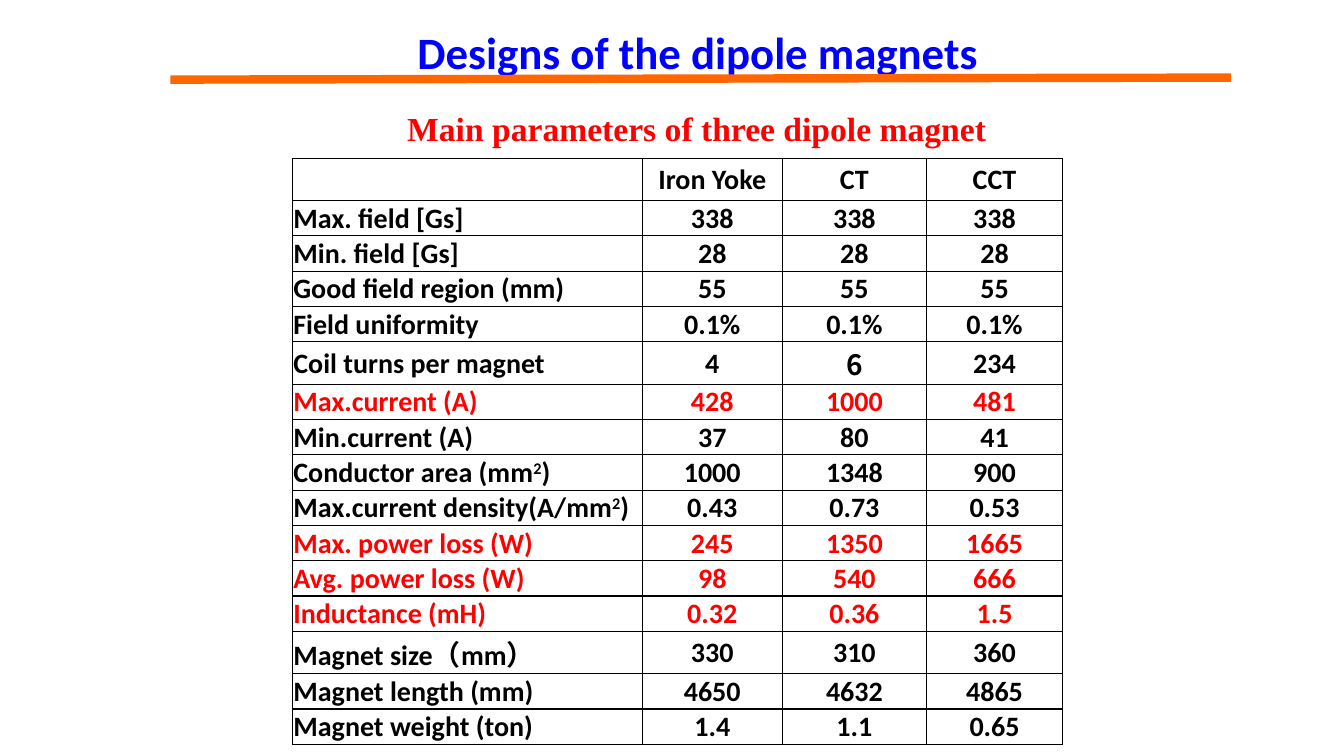
import dataclasses

import pptx
import pptx.chart
import pptx.dml.color
import pptx.enum.shapes
import pptx.enum.text
import pptx.oxml
import pptx.oxml.ns
import pptx.util
from pptx.util import Inches

RGBColor = pptx.dml.color.RGBColor
BLACK = RGBColor(0, 0, 0)
RED = RGBColor(0xFF, 0, 0)
BLUE = RGBColor(0, 0, 0xFF)
ORANGE = RGBColor(0xFF, 0x66, 0)
SANS, SERIF, CJK = "Calibri", "Times New Roman", "Noto Sans CJK SC"
LOW, TALL = Inches(0.35), Inches(0.42)
MARK = "^"


@dataclasses.dataclass
class Row:
    label: str
    yoke: str
    ct: str
    cct: str
    color: RGBColor = BLACK
    height: int = LOW
    font: str = SANS  # font of the CT value


ROWS = [
    Row("", "Iron Yoke", "CT", "CCT", height=TALL),
    Row("Max. field [Gs]", "338", "338", "338"),
    Row("Min. field [Gs]", "28", "28", "28"),
    Row("Good field region (mm)", "55", "55", "55"),
    Row("Field uniformity", "0.1%", "0.1%", "0.1%"),
    Row("Coil turns per magnet", "4", "6", "234", height=TALL, font=CJK),
    Row("Max.current (A)", "428", "1000", "481", RED),
    Row("Min.current (A)", "37", "80", "41"),
    Row("Conductor area (mm^2^)", "1000", "1348", "900"),
    Row("Max.current density(A/mm^2^)", "0.43", "0.73", "0.53"),
    Row("Max. power loss (W)", "245", "1350", "1665", RED),
    Row("Avg. power loss (W)", "98", "540", "666", RED),
    Row("Inductance (mH)", "0.32", "0.36", "1.5", RED),
    Row("Magnet size（mm）", "330", "310", "360", height=TALL),
    Row("Magnet length (mm)", "4650", "4632", "4865"),
    Row("Magnet weight (ton)", "1.4", "1.1", "0.65"),
]
WIDTHS = [3.47, 1.39, 1.43, 1.35]


def add_runs(par, text: str, size: int, font: str, color: RGBColor) -> None:
    """Add bold runs; text between two marks is superscript."""
    for i, part in enumerate(text.split(MARK)):
        run = par.add_run()
        run.text = part
        run.font.size = pptx.util.Pt(size)
        run.font.bold = True
        run.font.name = font
        run.font.color.rgb = color
        props = run._r.get_or_add_rPr()
        east = pptx.oxml.parse_xml(
            f'<a:ea {pptx.oxml.ns.nsdecls("a")} typeface="{CJK}"/>')
        props.find(pptx.oxml.ns.qn("a:latin")).addnext(east)
        if i % 2:
            props.set("baseline", "30000")


def set_head(shape, box: tuple, text: str, size: int, font: str,
             color: RGBColor) -> None:
    shape.left, shape.top, shape.width, shape.height = map(Inches, box)
    frame = shape.text_frame
    frame.word_wrap = True
    frame.auto_size = pptx.enum.text.MSO_AUTO_SIZE.NONE
    frame.vertical_anchor = pptx.enum.text.MSO_ANCHOR.TOP
    frame.margin_top = Inches(0.09)
    par = frame.paragraphs[0]
    par.alignment = pptx.enum.text.PP_ALIGN.LEFT
    par.line_spacing = 1.1
    par.space_before = pptx.util.Pt(0)
    add_runs(par, text, size, font, color)


def add_rule(slide) -> None:
    rule = slide.shapes.add_connector(
        pptx.enum.shapes.MSO_CONNECTOR.STRAIGHT,
        Inches(1.69), Inches(0.79), Inches(12.21), Inches(0.77))
    rule.line.color.rgb = ORANGE
    rule.line.width = pptx.util.Pt(6)
    rule._element.spPr.append(pptx.oxml.parse_xml(
        f'<a:effectLst {pptx.oxml.ns.nsdecls("a")}/>'))


def style_cell(cell) -> None:
    cell.margin_left = cell.margin_right = cell.margin_top = Inches(0.01)
    cell.margin_bottom = 0
    cell.vertical_anchor = pptx.enum.text.MSO_ANCHOR.MIDDLE
    props = cell._tc.get_or_add_tcPr()
    for side in "LRTB":
        props.append(pptx.oxml.parse_xml(
            f'<a:ln{side} {pptx.oxml.ns.nsdecls("a")} w="12700"><a:solidFill>'
            f'<a:srgbClr val="{BLACK}"/></a:solidFill></a:ln{side}>'))
    cell.fill.background()


def add_grid(slide) -> None:
    table = slide.shapes.add_table(
        len(ROWS), len(WIDTHS), Inches(2.9), Inches(1.57),
        Inches(sum(WIDTHS)), sum(row.height for row in ROWS)).table
    table.first_row = table.horz_banding = False
    for col, width in zip(table.columns, WIDTHS):
        col.width = Inches(width)
    align = pptx.enum.text.PP_ALIGN
    for r, row in enumerate(ROWS):
        table.rows[r].height = row.height
        for c, text in enumerate((row.label, row.yoke, row.ct, row.cct)):
            cell = table.cell(r, c)
            style_cell(cell)
            if text:
                par = cell.text_frame.paragraphs[0]
                par.alignment = align.CENTER if c else align.LEFT
                font = row.font if c == 2 else SANS
                add_runs(par, text, 20, font, row.color)


def main() -> None:
    deck = pptx.Presentation()
    deck.slide_width, deck.slide_height = Inches(13.33), Inches(7.5)
    slide = deck.slides.add_slide(deck.slide_layouts[5])
    add_rule(slide)
    add_grid(slide)
    set_head(slide.shapes.title, (4.04, 0.1, 5.91, 0.47),
             "Designs of the dipole magnets", 32, SANS, BLUE)
    note = slide.shapes.add_textbox(0, 0, 0, 0)
    set_head(note, (3.94, 0.94, 6.49, 0.75),
             "Main parameters of three dipole magnet", 24, SERIF, RED)
    deck.save("out.pptx")


if __name__ == "__main__":
    main()
